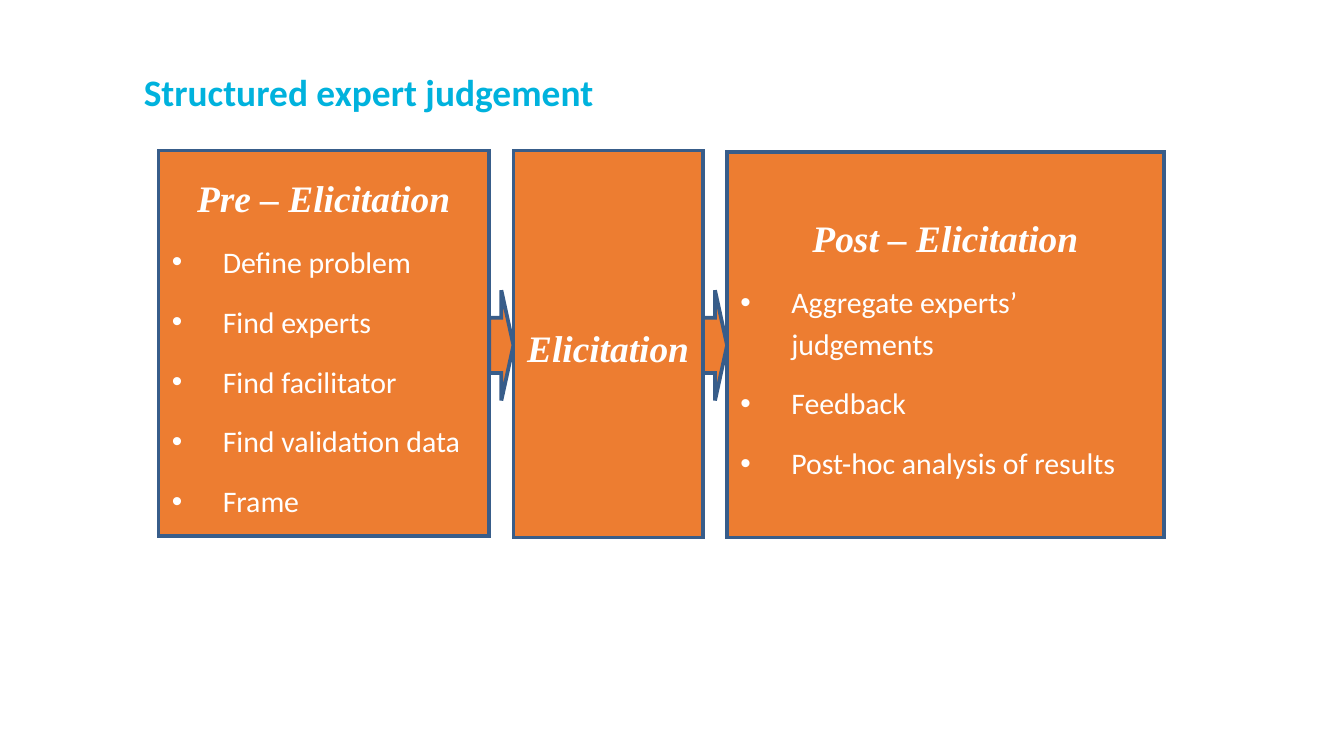
import pptx
import pptx.util
import pptx.dml.color
import pptx.enum.shapes
import pptx.enum.text
import pptx.oxml
import pptx.oxml.ns

Inches, Pt = pptx.util.Inches, pptx.util.Pt
SHAPES = pptx.enum.shapes.MSO_SHAPE
ALIGN = pptx.enum.text.PP_ALIGN
ANCHOR = pptx.enum.text.MSO_ANCHOR
NAMESPACE = pptx.oxml.ns.nsdecls("a")


def color(hex_text):
    return pptx.dml.color.RGBColor.from_string(hex_text)


def add_orange_shape(kind, left, top, width, height):
    shape = page.shapes.add_shape(
        kind, Inches(left), Inches(top), Inches(width), Inches(height))
    shape.shadow.inherit = False
    shape.fill.solid()
    shape.fill.fore_color.rgb = color("ED7D31")
    shape.line.color.rgb = color("385D8A")
    shape.line.width = Pt(2)
    outline = shape._element.spPr.find(pptx.oxml.ns.qn("a:ln"))
    outline.append(pptx.oxml.parse_xml(f'<a:miter {NAMESPACE} lim="800000"/>'))
    return shape


deck = pptx.Presentation()
deck.slide_width = Inches(10)
deck.slide_height = deck.slide_width * 9 // 16
page = deck.slides.add_slide(deck.slide_layouts[5])

title = page.shapes.title
title.left, title.top = Inches(0.97), Inches(0.5)
title.width, title.height = Inches(8.14), Inches(0.42)
title.text_frame.auto_size = pptx.enum.text.MSO_AUTO_SIZE.NONE
title.text_frame.vertical_anchor = ANCHOR.TOP
para = title.text_frame.paragraphs[0]
para.alignment = ALIGN.LEFT
para.line_spacing = 0.9
span = para.add_run()
span.text = "Structured expert judgement"
span.font.name = "Calibri"
span.font.size = Pt(20)
span.font.bold = True
span.font.color.rgb = color("00B2DD")

# Each stage: left, top, width, height, heading, bullet points
stages = [
    (1.18, 1.12, 2.46, 2.87, "Pre – Elicitation",
     ["Define problem", "Find experts", "Find facilitator",
      "Find validation data", "Frame"]),
    (3.82, 1.12, 1.41, 2.88, "Elicitation", []),
    (5.41, 1.13, 3.25, 2.87, "Post – Elicitation",
     ["Aggregate experts’ judgements", "Feedback",
      "Post-hoc analysis of results"]),
]
arrow_lefts = {"Pre – Elicitation": 3.32, "Post – Elicitation": 4.91}

for left, top, width, height, heading, points in stages:
    box = add_orange_shape(SHAPES.FLOWCHART_PROCESS, left, top, width, height)
    frame = box.text_frame
    frame.word_wrap = True
    frame.vertical_anchor = ANCHOR.MIDDLE
    for index, text in enumerate([heading] + points):
        is_heading = index == 0
        para = frame.paragraphs[0] if is_heading else frame.add_paragraph()
        para.alignment = ALIGN.CENTER if is_heading else ALIGN.LEFT
        para.line_spacing = 1.15
        para.space_after = Pt(10)
        if not is_heading:
            properties = para._p.get_or_add_pPr()
            properties.set("marL", str(Inches(0.38)))
            properties.set("indent", str(-Inches(0.38)))
            properties.append(pptx.oxml.parse_xml(
                f'<a:buFont {NAMESPACE} typeface="Arial"/>'))
            properties.append(pptx.oxml.parse_xml(
                f'<a:buChar {NAMESPACE} char="•"/>'))
        span = para.add_run()
        span.text = text
        span.font.name = "Times New Roman" if is_heading else "Calibri"
        span.font.size = Pt(20 if is_heading else 16)
        span.font.bold = is_heading
        span.font.italic = is_heading
        span.font.color.rgb = color("FFFFFF")
    if heading in arrow_lefts:
        arrow = add_orange_shape(
            SHAPES.UP_ARROW, arrow_lefts[heading], 2.48, 0.82, 0.18)
        arrow.rotation = 90

deck.save("out.pptx")
